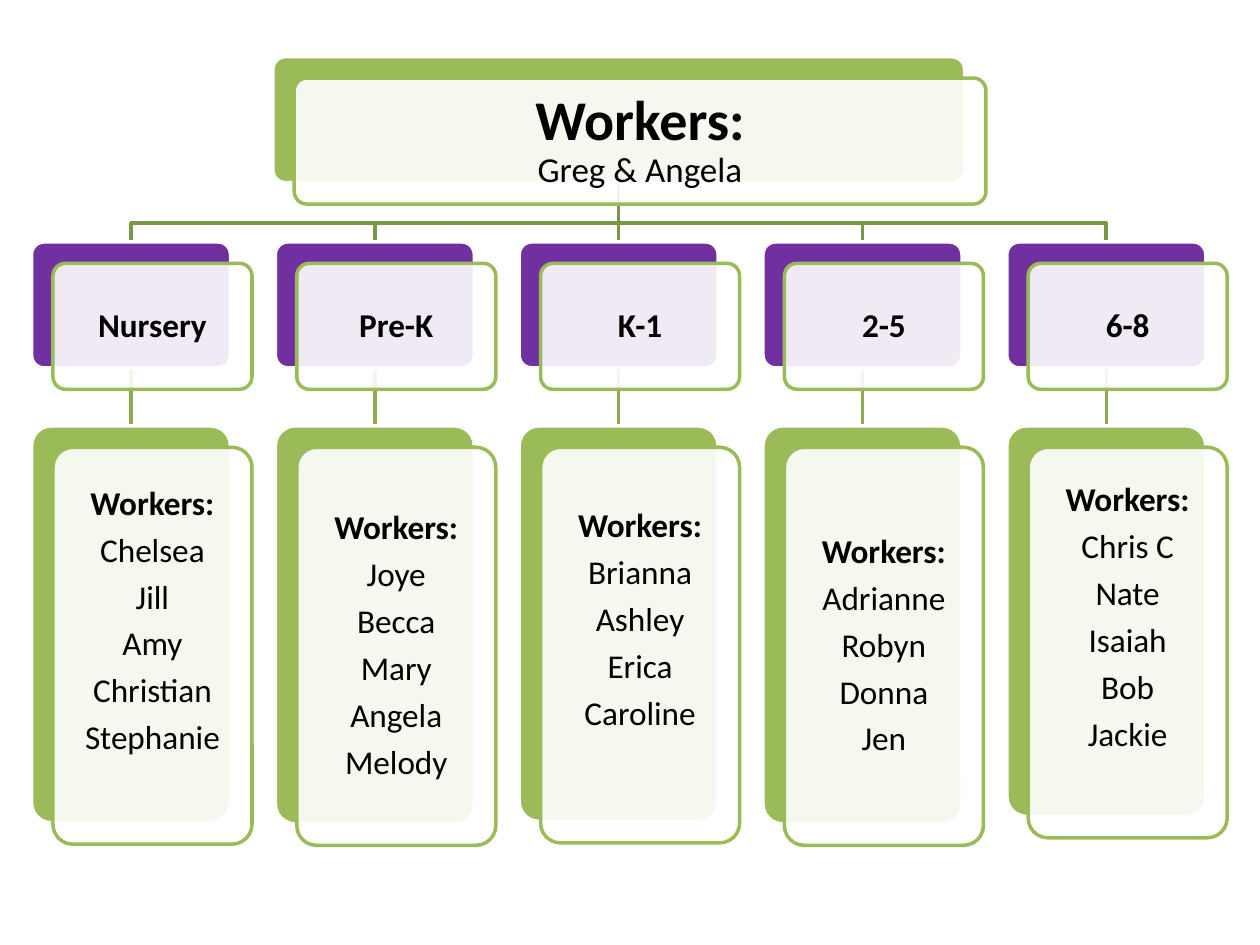
from dataclasses import dataclass

from lxml.etree import SubElement
from pptx import Presentation
from pptx.dml.color import RGBColor
from pptx.enum.shapes import MSO_CONNECTOR, MSO_SHAPE
from pptx.enum.text import MSO_ANCHOR, MSO_AUTO_SIZE, PP_ALIGN
from pptx.oxml.ns import qn
from pptx.util import Inches, Pt


@dataclass(frozen=True)
class Theme:
    """Hold the colours, type sizes and line width of the chart."""
    font: str = "Calibri"
    ink: str = "000000"
    white: str = "FFFFFF"
    green: str = "9BBB59"
    purple: str = "7030A0"
    upper_link: str = "7C9647"
    lower_link: str = "8DAA51"
    title_size: float = 32
    leader_size: float = 20
    card_size: float = 19
    line_width: float = 2
    panel_opacity: int = 90


THEME = Theme()
TEAMS = [
    ("Nursery", ["Chelsea", "Jill", "Amy", "Christian", "Stephanie"], 3.15, 0.38),
    ("Pre-K", ["Joye", "Becca", "Mary", "Angela", "Melody"], 3.16, 0),
    ("K-1", ["Brianna", "Ashley", "Erica", "Caroline"], 3.14, 0.38),
    ("2-5", ["Adrianne", "Robyn", "Donna", "Jen"], 3.16, 0),
    ("6-8", ["Chris C", "Nate", "Isaiah", "Bob", "Jackie"], 3.1, 0.38),
]
CARD_WIDTH, CARD_HEIGHT = 1.58, 1
FIRST_LEFT, LAST_LEFT = 0.25, 7.99
PITCH = (LAST_LEFT - FIRST_LEFT) / (len(TEAMS) - 1)
ROOT_TOP, GROUP_TOP, LIST_TOP = 0.45, 1.92, 3.38
ROOT_WIDTH = 5.49
ROOT_CENTRE = (FIRST_LEFT + LAST_LEFT + CARD_WIDTH) / 2
BRANCH_TOP = 1.77
OFFSET = 0.17
INSET = 0.05


def style_line(line, colour):
    """Give an outline its colour and the common width."""
    line.color.rgb = RGBColor.from_string(colour)
    line.width = Pt(THEME.line_width)


def add_straight_link(page, centre, top, bottom, colour):
    """Draw a vertical connector without a shadow."""
    link = page.shapes.add_connector(
        MSO_CONNECTOR.STRAIGHT, Inches(centre), Inches(top), Inches(centre), Inches(bottom))
    style_line(link.line, colour)
    SubElement(link.element.spPr, qn("a:effectLst"))
    return link


def add_branch(page, centre):
    """Draw a bent line from the root box to a group box."""
    builder = page.shapes.build_freeform(Inches(ROOT_CENTRE), Inches(ROOT_TOP + CARD_HEIGHT))
    corners = [(ROOT_CENTRE, BRANCH_TOP), (centre, BRANCH_TOP), (centre, GROUP_TOP)]
    builder.add_line_segments([(Inches(x), Inches(y)) for x, y in corners], close=False)
    branch = builder.convert_to_shape()
    branch.shadow.inherit = False
    branch.fill.background()
    style_line(branch.line, THEME.upper_link)


def add_box(page, left, top, width, height, fill, outline, opacity=100):
    """Add a rounded box with a fill and an outline."""
    box = page.shapes.add_shape(
        MSO_SHAPE.ROUNDED_RECTANGLE, Inches(left), Inches(top), Inches(width), Inches(height))
    box.adjustments[0] = 0.1
    box.shadow.inherit = False
    box.fill.solid()
    box.fill.fore_color.rgb = RGBColor.from_string(fill)
    if opacity < 100:
        colour = box.element.spPr.find(qn("a:solidFill")).find(qn("a:srgbClr"))
        SubElement(colour, qn("a:alpha"), val=str(opacity * 1000))
    style_line(box.line, outline)
    return box


def add_card(page, left, top, width, height, colour):
    """Add a coloured box with a translucent panel set over it."""
    back = add_box(page, left, top, width, height, colour, THEME.white)
    panel = add_box(page, left + OFFSET, top + OFFSET, width, height,
                    THEME.white, THEME.green, THEME.panel_opacity)
    return back, panel


def prepare_frame(frame, inset, extra_bottom=0):
    """Centre a text frame vertically and set its margins."""
    frame.word_wrap = True
    frame.auto_size = MSO_AUTO_SIZE.NONE
    frame.vertical_anchor = MSO_ANCHOR.MIDDLE
    frame.margin_left = frame.margin_right = frame.margin_top = Inches(inset)
    frame.margin_bottom = Inches(inset + extra_bottom)


def write_para(para, text, size=THEME.card_size, bold=False, space_after=6.3):
    """Write one centred paragraph in the chart's font."""
    para.alignment = PP_ALIGN.CENTER
    para.line_spacing = 0.9
    para.space_before = Pt(0)
    para.space_after = Pt(space_after)
    span = para.add_run()
    span.text = text
    span.font.name = THEME.font
    span.font.size = Pt(size)
    span.font.bold = bold
    span.font.color.rgb = RGBColor.from_string(THEME.ink)


def add_root(page):
    """Add the top card and lay the slide title over its panel."""
    back, panel = add_card(page, ROOT_CENTRE - ROOT_WIDTH / 2, ROOT_TOP,
                           ROOT_WIDTH, CARD_HEIGHT, THEME.green)
    title = page.shapes.title
    title.left, title.top = panel.left, panel.top
    title.width, title.height = panel.width, panel.height
    title.element.getparent().append(title.element)
    frame = title.text_frame
    prepare_frame(frame, 0.13)
    write_para(frame.paragraphs[0], "Workers:", size=THEME.title_size, bold=True, space_after=0)
    write_para(frame.add_paragraph(), "Greg & Angela", size=THEME.leader_size)
    return back


def add_team(page, left, group, names, list_height, extra_bottom):
    """Add a group card and the card that lists its workers."""
    group_box, group_panel = add_card(page, left, GROUP_TOP, CARD_WIDTH, CARD_HEIGHT, THEME.purple)
    prepare_frame(group_panel.text_frame, INSET)
    write_para(group_panel.text_frame.paragraphs[0], group, bold=True)
    list_box, list_panel = add_card(page, left, LIST_TOP, CARD_WIDTH, list_height, THEME.green)
    frame = list_panel.text_frame
    prepare_frame(frame, INSET, extra_bottom)
    write_para(frame.paragraphs[0], "Workers:", bold=True)
    for name in names:
        write_para(frame.add_paragraph(), name)
    return group_box, list_box


def join(link, upper, lower):
    """Attach a connector from the bottom of one box to the top of another."""
    link.begin_connect(upper, 2)
    link.end_connect(lower, 0)


def main():
    """Build the chart of workers and save it."""
    deck = Presentation()
    deck.slide_width, deck.slide_height = Inches(10), Inches(7.5)
    page = deck.slides.add_slide(deck.slide_layouts[5])
    lefts = [FIRST_LEFT + PITCH * index for index in range(len(TEAMS))]
    middle = len(TEAMS) // 2
    list_links = []
    for index, left in enumerate(lefts):
        centre = left + CARD_WIDTH / 2
        list_links.append(add_straight_link(
            page, centre, GROUP_TOP + CARD_HEIGHT, LIST_TOP, THEME.lower_link))
        if index != middle:
            add_branch(page, centre)
    trunk = add_straight_link(
        page, ROOT_CENTRE, ROOT_TOP + CARD_HEIGHT, GROUP_TOP, THEME.upper_link)
    root = add_root(page)
    boxes = [add_team(page, left, *team) for left, team in zip(lefts, TEAMS)]
    for link, (group_box, list_box) in zip(list_links, boxes):
        join(link, group_box, list_box)
    join(trunk, root, boxes[middle][0])
    deck.save("out.pptx")


if __name__ == "__main__":
    main()
